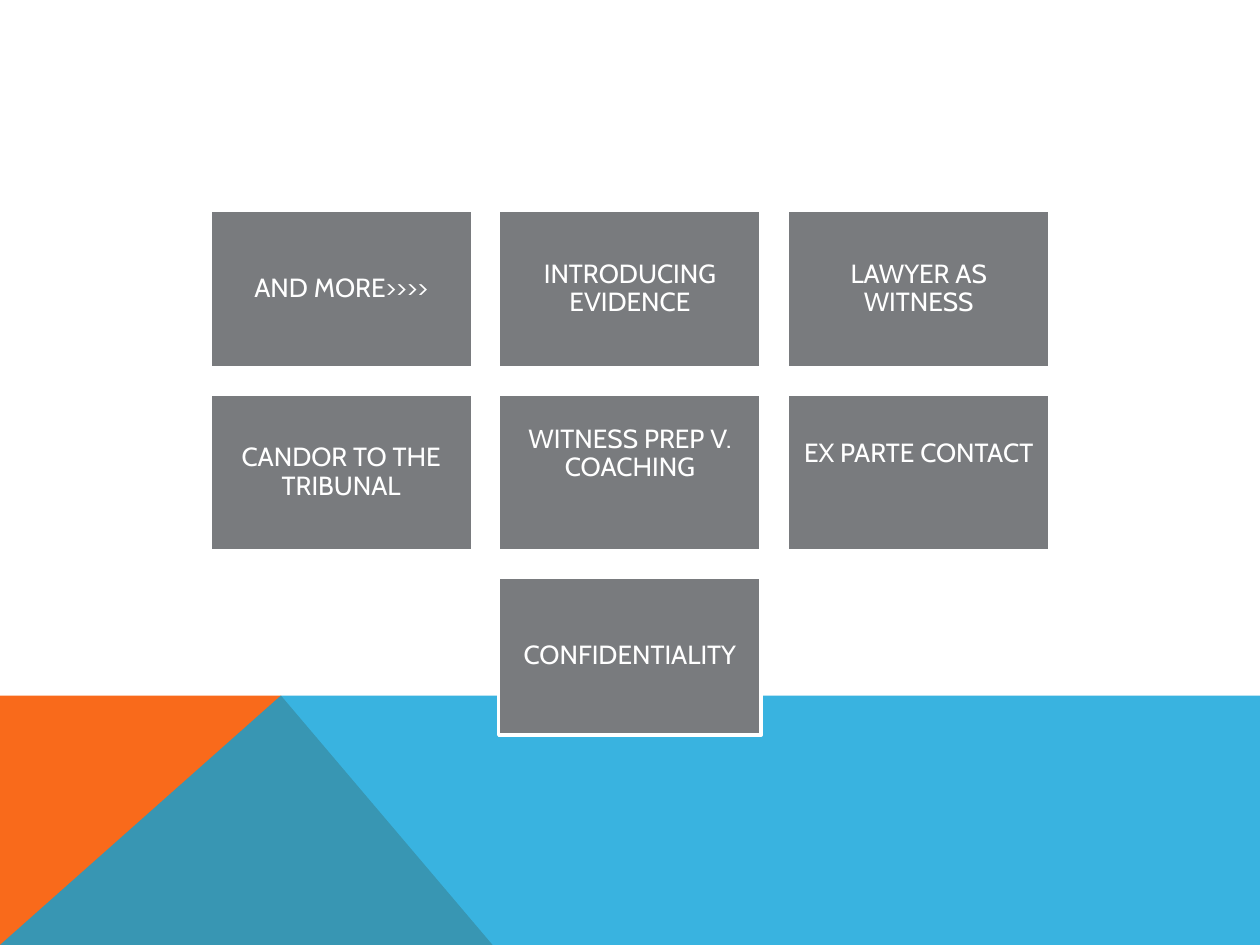
from dataclasses import dataclass

from lxml import etree
from pptx import Presentation
from pptx.dml.color import RGBColor
from pptx.enum.text import MSO_ANCHOR, PP_ALIGN
from pptx.enum.shapes import MSO_SHAPE
from pptx.oxml.ns import qn
from pptx.util import Inches, Pt

RECTANGLE = MSO_SHAPE.RECTANGLE
MIDDLE = MSO_ANCHOR.MIDDLE
CENTER = PP_ALIGN.CENTER
BLANK_LAYOUT = 6


@dataclass(frozen=True)
class Theme:
    orange: RGBColor = RGBColor(0xF9, 0x6A, 0x1B)
    blue: RGBColor = RGBColor(0x08, 0xA1, 0xD9)
    gray: RGBColor = RGBColor(0x79, 0x7B, 0x7E)
    white: RGBColor = RGBColor(0xFF, 0xFF, 0xFF)
    font: str = "Cabin"
    text_size: Pt = Pt(15)
    outline: Pt = Pt(2)


@dataclass(frozen=True)
class Box:
    left: int
    top: int
    width: int
    height: int


THEME = Theme()
COLUMNS = 3
GAP_SHARE = 0.1
ASPECT = 0.6
INSET = Inches(0.06)
RAISED_INSET = Inches(0.35)

# Each row is centred; the flag raises the text above the middle of its tile.
TOPIC_ROWS = [
    [("AND MORE>>>>", False), ("INTRODUCING EVIDENCE", False), ("LAWYER AS WITNESS", False)],
    [("CANDOR TO THE TRIBUNAL", False), ("WITNESS PREP V. COACHING", True),
     ("EX PARTE CONTACT", True)],
    [("CONFIDENTIALITY", False)],
]


def add_polygon(slide, box, corners, color, opacity=None):
    """Draw a filled outline whose corners are shares of the box."""
    points = [(round(box.left + x * box.width), round(box.top + y * box.height))
              for x, y in corners]
    builder = slide.shapes.build_freeform(*points[0])
    builder.add_line_segments(points[1:], close=True)
    polygon = builder.convert_to_shape()
    polygon.shadow.inherit = False
    polygon.fill.solid()
    polygon.fill.fore_color.rgb = color
    polygon.line.fill.background()
    if opacity is not None:
        color_element = polygon.fill._xPr.find(qn("a:solidFill"))[0]
        etree.SubElement(color_element, qn("a:alpha")).set("val", str(opacity * 1000))


def add_footer_band(slide, box):
    peak, foot = 0.223, 0.391
    add_polygon(slide, box, [(0, 1), (0, 0), (peak, 0), (foot, 1)], THEME.orange)
    add_polygon(slide, box, [(0, 1), (peak, 0), (1, 0), (1, 1)], THEME.blue, opacity=80)


def add_tile(slide, box, text, raised):
    tile = slide.shapes.add_shape(RECTANGLE, box.left, box.top, box.width, box.height)
    tile.shadow.inherit = False
    tile.fill.solid()
    tile.fill.fore_color.rgb = THEME.gray
    tile.line.color.rgb = THEME.white
    tile.line.width = THEME.outline

    frame = tile.text_frame
    frame.word_wrap = True
    frame.vertical_anchor = MIDDLE
    frame.margin_left = frame.margin_right = frame.margin_top = INSET
    frame.margin_bottom = RAISED_INSET if raised else INSET
    frame.text = text
    paragraph = frame.paragraphs[0]
    paragraph.alignment = CENTER
    paragraph.line_spacing = 0.9
    font = paragraph.runs[0].font
    font.name = THEME.font
    font.size = THEME.text_size
    font.color.rgb = THEME.white


def add_topic_grid(slide, box, rows):
    tile_width = box.width / (COLUMNS + (COLUMNS - 1) * GAP_SHARE)
    tile_height = tile_width * ASPECT
    gap = tile_width * GAP_SHARE
    for row_index, row in enumerate(rows):
        row_width = len(row) * (tile_width + gap) - gap
        row_left = box.left + (box.width - row_width) / 2
        top = box.top + row_index * (tile_height + gap)
        for column, (text, raised) in enumerate(row):
            left = row_left + column * (tile_width + gap)
            tile_box = Box(round(left), round(top), round(tile_width), round(tile_height))
            add_tile(slide, tile_box, text, raised)


def main():
    presentation = Presentation()
    presentation.slide_width = width = Inches(10)
    presentation.slide_height = height = Inches(7.5)
    slide = presentation.slides.add_slide(presentation.slide_layouts[BLANK_LAYOUT])

    band_top = Inches(5.52)
    add_footer_band(slide, Box(0, band_top, width, height - band_top))
    margin = width // 6
    grid_box = Box(margin, margin, width - 2 * margin, height - 2 * margin)
    add_topic_grid(slide, grid_box, TOPIC_ROWS)
    presentation.save("out.pptx")


if __name__ == "__main__":
    main()
